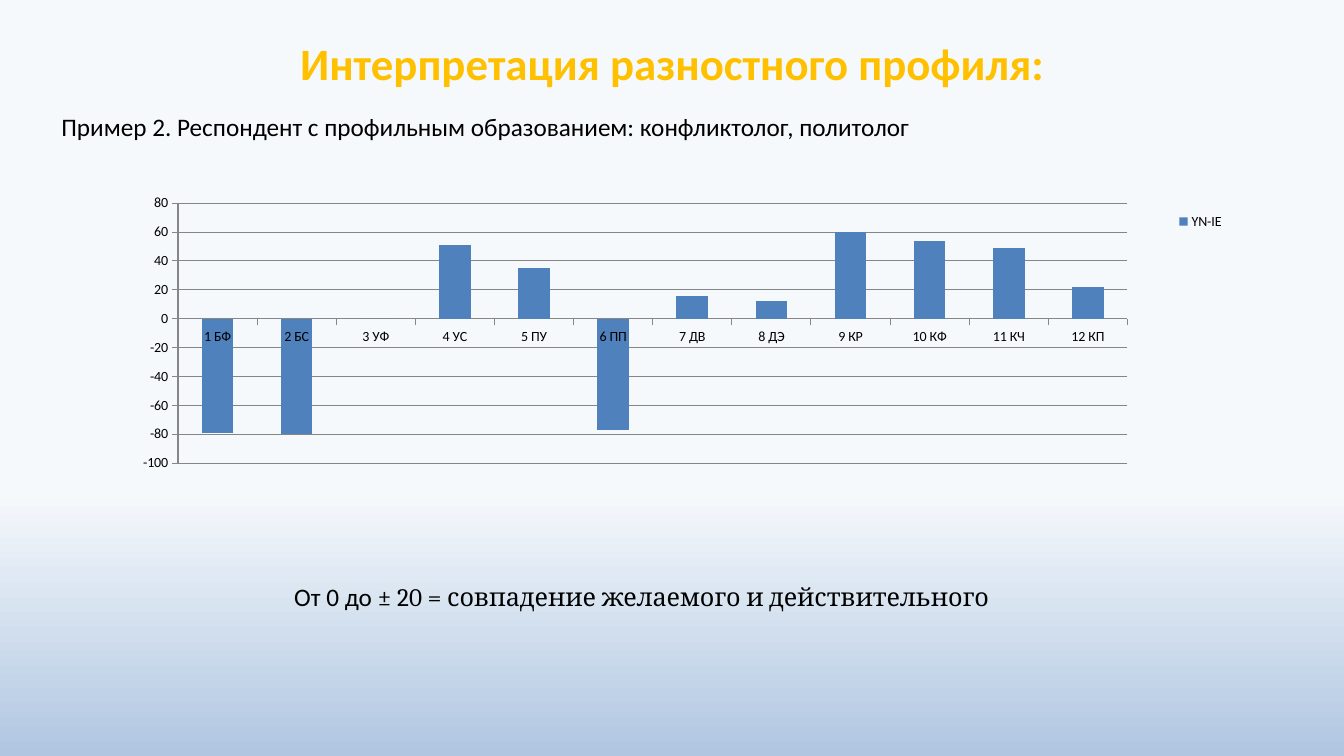
from typing import NamedTuple

from lxml import etree
from pptx import Presentation
from pptx.chart import data as cd
from pptx.dml.color import RGBColor
from pptx.enum import chart as ec, text
from pptx.oxml import ns
from pptx.util import Inches, Pt

GOLD = RGBColor(0xFF, 0xC0, 0x00)
BLACK = RGBColor(0x00, 0x00, 0x00)
BLUE = RGBColor(0x4F, 0x81, 0xBD)
GRAY = RGBColor(0x86, 0x86, 0x86)
SKY_TOP = RGBColor(0xF6, 0xF9, 0xFC)
SKY_BOTTOM = RGBColor(0xB0, 0xC6, 0xE1)


class Box(NamedTuple):
    left: float
    top: float
    width: float
    height: float


class Run(NamedTuple):
    text: str
    font: str = "Calibri"


class Score(NamedTuple):
    scale: str
    value: int


SCORES = [
    Score("1 БФ", -79), Score("2 БС", -80), Score("3 УФ", 0), Score("4 УС", 51),
    Score("5 ПУ", 35), Score("6 ПП", -77), Score("7 ДВ", 16), Score("8 ДЭ", 12),
    Score("9 КР", 60), Score("10 КФ", 54), Score("11 КЧ", 49), Score("12 КП", 22),
]


def add_text(slide, box: Box, runs: list[Run], *, size: float = 18,
             color: RGBColor = BLACK, bold: bool = False,
             align=text.PP_ALIGN.LEFT, anchor=text.MSO_ANCHOR.TOP) -> None:
    tf = slide.shapes.add_textbox(*map(Inches, box)).text_frame
    tf.word_wrap = True
    tf.vertical_anchor = anchor
    p = tf.paragraphs[0]
    p.alignment = align
    for run in runs:
        r = p.add_run()
        r.text = run.text
        r.font.name, r.font.size, r.font.bold = run.font, Pt(size), bold
        r.font.color.rgb = color


def make_layout(box: Box, inner: bool = False):
    """Manual chart layout, in fractions of the chart area."""
    layout = etree.Element(ns.qn("c:layout"))
    manual = etree.SubElement(layout, ns.qn("c:manualLayout"))
    settings = [("layoutTarget", "inner")] if inner else []
    settings += [("xMode", "edge"), ("yMode", "edge")]
    settings += zip("xywh", map(str, box))
    for tag, val in settings:
        etree.SubElement(manual, ns.qn(f"c:{tag}")).set("val", val)
    return layout


def add_profile_chart(slide, box: Box, scores: list[Score]) -> None:
    data = cd.CategoryChartData(number_format="0")
    data.categories = [s.scale for s in scores]
    data.add_series("YN-IE", [s.value for s in scores])
    chart = slide.shapes.add_chart(
        ec.XL_CHART_TYPE.COLUMN_CLUSTERED, *map(Inches, box), data).chart
    chart.has_title = False
    chart.font.name, chart.font.size = "Calibri", Pt(10)
    chart.font.color.rgb = BLACK

    # Columns
    plot = chart.plots[0]
    plot.gap_width = 150
    plot.vary_by_categories = False
    series = plot.series[0]
    series.invert_if_negative = False
    series.format.fill.solid()
    series.format.fill.fore_color.rgb = BLUE

    # Axes
    values = chart.value_axis
    values.minimum_scale, values.maximum_scale, values.major_unit = -100, 80, 20
    values.has_major_gridlines = True
    for axis in (chart.category_axis, values):
        axis.major_tick_mark = ec.XL_TICK_MARK.OUTSIDE
        axis.tick_label_position = ec.XL_TICK_LABEL_POSITION.NEXT_TO_AXIS
    for part in (chart.category_axis, values, values.major_gridlines):
        part.format.line.color.rgb = GRAY
        part.format.line.width = Pt(0.75)

    # Legend and plot placement
    chart.has_legend = True
    chart.legend.position = ec.XL_LEGEND_POSITION.RIGHT
    chart.legend.include_in_layout = False
    legend_pos = chart.legend._element.find(ns.qn("c:legendPos"))
    legend_pos.addnext(make_layout(Box(0.92, 0.07, 0.06, 0.08)))
    area = chart._chartSpace.find(".//" + ns.qn("c:plotArea"))
    for old in area.findall(ns.qn("c:layout")):
        area.remove(old)
    area.insert(0, make_layout(Box(0.081, 0.061, 0.807, 0.695), inner=True))


def main() -> None:
    prs = Presentation()
    prs.slide_width, prs.slide_height = Inches(13.33), Inches(7.5)
    s = prs.slides.add_slide(prs.slide_layouts[6])

    # Background
    fill = s.background.fill
    fill.gradient()
    fill.gradient_angle = 270
    for stop, position, color in zip(fill.gradient_stops, (0.65, 1), (SKY_TOP, SKY_BOTTOM)):
        stop.position = position
        stop.color.rgb = color

    # Title, chart and captions
    add_text(s, Box(0.67, 0, 12, 1.25), [Run("Интерпретация разностного профиля:")],
             size=32, color=GOLD, bold=True,
             align=text.PP_ALIGN.CENTER, anchor=text.MSO_ANCHOR.MIDDLE)
    add_text(s, Box(2.82, 5.72, 8.04, 0.4),
             [Run("От 0 до "),
              Run("± 20 = совпадение желаемого и действительного", "Cambria")])
    add_text(s, Box(0.51, 1.06, 10.47, 0.4),
             [Run("Пример 2. Респондент с профильным образованием: конфликтолог, политолог")])
    add_profile_chart(s, Box(0.82, 1.79, 11.67, 3.71), SCORES)

    prs.save("out.pptx")


if __name__ == "__main__":
    main()
